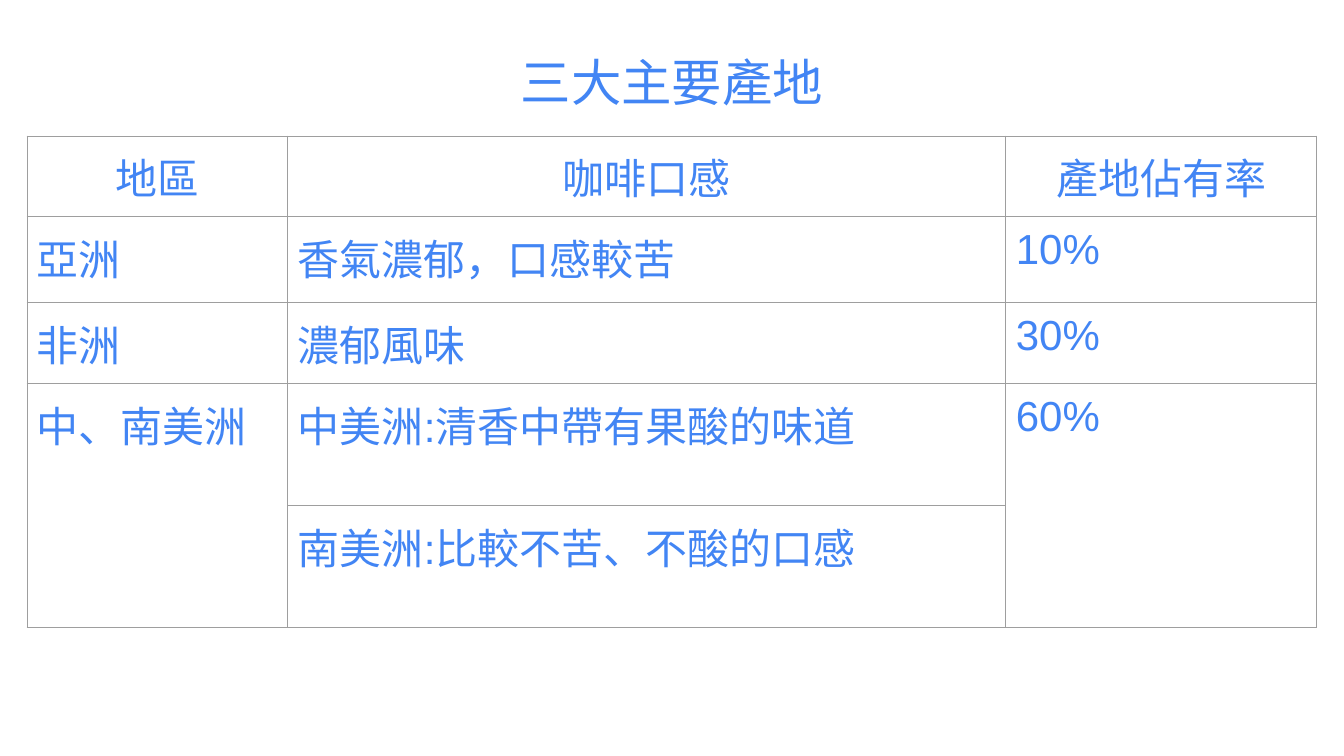
from dataclasses import dataclass

import pptx
import pptx.dml.color
import pptx.enum.text
import pptx.oxml
import pptx.oxml.ns
import pptx.util

TITLE = "三大主要產地"
HEADINGS = ("地區", "咖啡口感", "產地佔有率")
# Each region: name, flavours (one table row each), share of production
REGIONS = [
    ("亞洲", ["香氣濃郁，口感較苦"], "10%"),
    ("非洲", ["濃郁風味"], "30%"),
    ("中、南美洲", ["中美洲:清香中帶有果酸的味道", "南美洲:比較不苦、不酸的口感"], "60%"),
]

SLIDE_SIZE = (1344, 756)
TITLE_BOX = (450, 0, 444, 125)
TITLE_INSET = 13
TABLE_ORIGIN = (27, 136)
COLUMN_WIDTHS = (261, 718, 311)
ROW_HEIGHTS = (73, 86, 81, 122, 122)
CELL_INSET = 10


@dataclass(frozen=True)
class Theme:
    text: str = "4285F4"
    border: str = "9E9E9E"
    border_width: float = 0.75
    title_font: str = "Calibri"
    title_size: int = 36
    cell_font: str = "Arial"
    cell_size: int = 30


THEME = Theme()
ALIGN = pptx.enum.text.PP_ALIGN


def px(length):
    return pptx.util.Emu(round(length * 914400 / 100.8))


def set_margins(target, inset):
    target.margin_left = target.margin_right = px(inset)
    target.margin_top = target.margin_bottom = px(inset)


def style_paragraph(paragraph, font_name, size, alignment):
    paragraph.alignment = alignment
    paragraph.font.name = font_name
    paragraph.font.size = pptx.util.Pt(size)
    paragraph.font.bold = False
    paragraph.font.color.rgb = pptx.dml.color.RGBColor.from_string(THEME.text)


def add_borders(cell):
    properties = cell._tc.get_or_add_tcPr()
    width = pptx.util.Pt(THEME.border_width)
    for side in "LRTB":
        properties.append(pptx.oxml.parse_xml(
            f'<a:ln{side} {pptx.oxml.ns.nsdecls("a")} w="{width}"><a:solidFill>'
            f'<a:srgbClr val="{THEME.border}"/></a:solidFill></a:ln{side}>'))


def write_cell(cell, text, alignment):
    cell.text = text
    style_paragraph(cell.text_frame.paragraphs[0], THEME.cell_font, THEME.cell_size, alignment)


def add_title(slide):
    title = slide.shapes.title
    title.left, title.top, title.width, title.height = map(px, TITLE_BOX)
    frame = title.text_frame
    frame.text = TITLE
    frame.word_wrap = True
    frame.auto_size = pptx.enum.text.MSO_AUTO_SIZE.NONE
    frame.vertical_anchor = pptx.enum.text.MSO_ANCHOR.BOTTOM
    set_margins(frame, TITLE_INSET)
    style_paragraph(frame.paragraphs[0], THEME.title_font, THEME.title_size, ALIGN.CENTER)
    frame.paragraphs[0].line_spacing = 0.85


def add_region_table(slide):
    table = slide.shapes.add_table(
        len(ROW_HEIGHTS), len(COLUMN_WIDTHS), *map(px, TABLE_ORIGIN),
        px(sum(COLUMN_WIDTHS)), px(sum(ROW_HEIGHTS))).table
    table.first_row = table.horz_banding = False
    for column, width in zip(table.columns, COLUMN_WIDTHS):
        column.width = px(width)
    for row, height in zip(table.rows, ROW_HEIGHTS):
        row.height = px(height)
    for cell in table.iter_cells():
        add_borders(cell)
        cell.fill.background()
        set_margins(cell, CELL_INSET)

    for column, heading in enumerate(HEADINGS):
        write_cell(table.cell(0, column), heading, ALIGN.CENTER)
    top = 1
    for region, flavours, share in REGIONS:
        bottom = top + len(flavours) - 1
        for column, text in ((0, region), (2, share)):
            if bottom > top:
                table.cell(top, column).merge(table.cell(bottom, column))
            write_cell(table.cell(top, column), text, ALIGN.LEFT)
        for row, flavour in enumerate(flavours, top):
            write_cell(table.cell(row, 1), flavour, ALIGN.LEFT)
        top = bottom + 1


def main():
    presentation = pptx.Presentation()
    presentation.slide_width, presentation.slide_height = map(px, SLIDE_SIZE)
    slide = presentation.slides.add_slide(presentation.slide_layouts.get_by_name("Title Only"))
    add_title(slide)
    add_region_table(slide)
    presentation.save("out.pptx")


if __name__ == "__main__":
    main()
